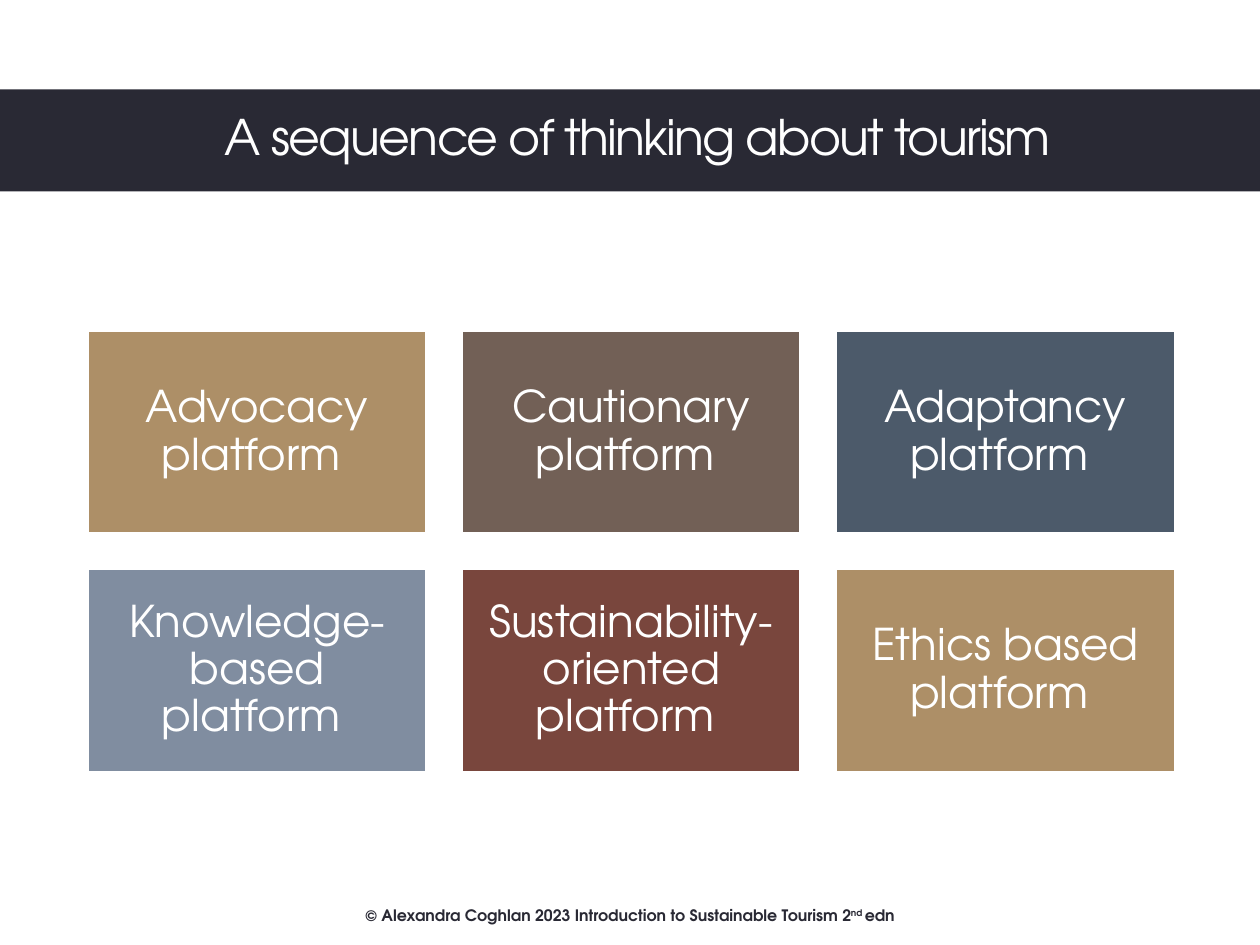
import pptx
import pptx.dml.color
import pptx.enum.shapes
import pptx.enum.text
import pptx.util

Inches = pptx.util.Inches
FONT = "TeX Gyre Adventor"
DARK = "292934"
WHITE = "FFFFFF"

# Card grid: three columns, two rows
COLUMNS = 3
CARD_LEFT, CARD_TOP = 0.69, 2.62
CARD_WIDTH, CARD_HEIGHT = 2.7, 1.62
GAP = 0.27

# The trailing space is part of each label and affects its centring
PLATFORMS = [
    ("Advocacy platform ", "AD8F67"),
    ("Cautionary platform ", "726056"),
    ("Adaptancy platform ", "4C5A6A"),
    ("Knowledge-based platform ", "808DA0"),
    ("Sustainability-oriented platform ", "79463D"),
    ("Ethics based platform ", "AD8F67"),
]


def color(hex_value):
    return pptx.dml.color.RGBColor.from_string(hex_value)


def add_span(para, text, size, hex_value, bold=False):
    span = para.add_run()
    span.text = text
    span.font.name = FONT
    span.font.size = pptx.util.Pt(size)
    span.font.bold = bold
    span.font.color.rgb = color(hex_value)
    return span


def centred_para(box, line_spacing=None):
    frame = box.text_frame
    frame.word_wrap = True
    frame.auto_size = pptx.enum.text.MSO_AUTO_SIZE.NONE
    frame.vertical_anchor = pptx.enum.text.MSO_ANCHOR.MIDDLE
    para = frame.paragraphs[0]
    para.alignment = pptx.enum.text.PP_ALIGN.CENTER
    para.line_spacing = line_spacing
    return para


def add_rectangle(page, left, top, width, height, fill):
    box = page.shapes.add_shape(
        pptx.enum.shapes.MSO_SHAPE.RECTANGLE,
        Inches(left), Inches(top), Inches(width), Inches(height))
    box.shadow.inherit = False
    box.fill.solid()
    box.fill.fore_color.rgb = color(fill)
    box.line.fill.background()
    return box


def add_title(page, text):
    band = add_rectangle(page, 0, 0.71, 10, 0.81, DARK)
    title = page.shapes.title
    title.element.addprevious(band.element)  # band sits behind the title
    title.left, title.top = Inches(0.46), Inches(0.7)
    title.width, title.height = Inches(9.2), Inches(0.81)
    span = add_span(centred_para(title, 0.9), text, 28, WHITE)
    span.font._element.set("spc", "-100")


def add_card(page, index, text, fill):
    row, column = divmod(index, COLUMNS)
    card = add_rectangle(
        page, CARD_LEFT + column * (CARD_WIDTH + GAP),
        CARD_TOP + row * (CARD_HEIGHT + GAP), CARD_WIDTH, CARD_HEIGHT, fill)
    card.line.color.rgb = color(WHITE)
    card.line.width = pptx.util.Pt(2.08)
    frame = card.text_frame
    frame.margin_left = frame.margin_right = Inches(0.1)
    frame.margin_top = frame.margin_bottom = Inches(0.1)
    add_span(centred_para(card, 0.9), text, 25, WHITE)


def add_footer(page):
    box = page.shapes.add_textbox(
        Inches(2.64), Inches(7.14), Inches(4.72), Inches(0.25))
    para = centred_para(box)
    add_span(para, "© Alexandra Coghlan 2023 Introduction to Sustainable Tourism 2",
             9, DARK, bold=True)
    ordinal = add_span(para, "nd ", 9, DARK, bold=True)
    ordinal.font._element.set("baseline", "30000")
    add_span(para, "edn", 9, DARK, bold=True)


def main():
    deck = pptx.Presentation()
    deck.slide_width, deck.slide_height = Inches(10), Inches(7.5)
    page = deck.slides.add_slide(deck.slide_layouts[5])  # title only

    add_footer(page)
    add_title(page, "A sequence of thinking about tourism")
    for index, (text, fill) in enumerate(PLATFORMS):
        add_card(page, index, text, fill)

    deck.save("out.pptx")


if __name__ == "__main__":
    main()
